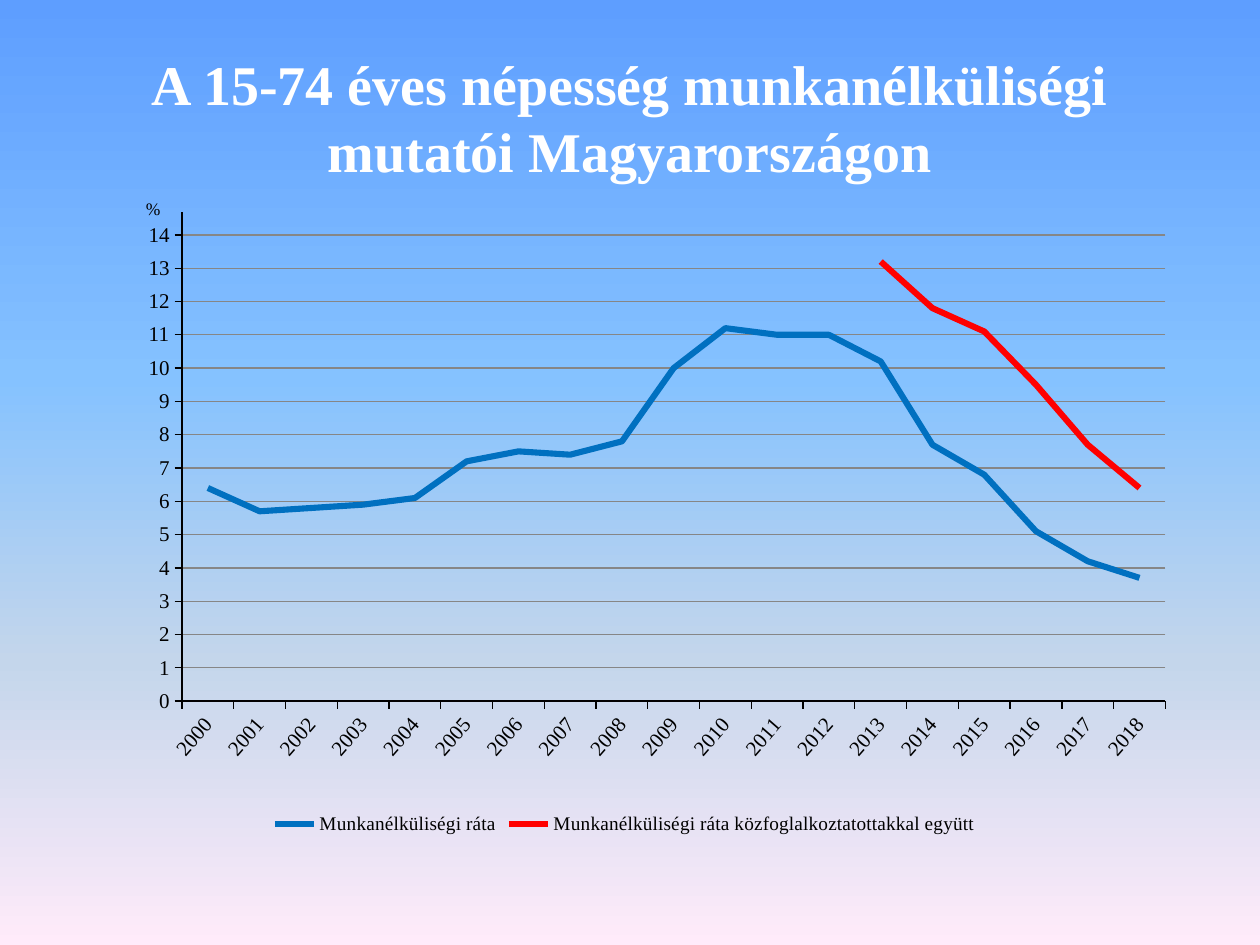
import dataclasses

import pptx
import pptx.chart.data
import pptx.dml.color
import pptx.enum.chart
import pptx.enum.text
import pptx.oxml
import pptx.oxml.ns
import pptx.util

Inches = pptx.util.Inches
Pt = pptx.util.Pt


@dataclasses.dataclass(frozen=True)
class Theme:
    """Colours, fonts and type sizes of the slide."""
    font: str = "Times New Roman"
    chart_font: str = "Calibri"
    white: str = "FFFFFF"
    ink: str = "000000"
    grid: str = "868686"
    rates: tuple = ("0070C0", "FF0000")
    sky: tuple = ((0, "5E9EFF"), (40, "85C2FF"), (70, "C4D6EB"), (100, "FFEBFA"))
    title_size: int = 32
    chart_size: int = 18
    axis_size: int = 12
    legend_size: int = 11
    unit_size: int = 10
    rate_width: float = 3.5
    axis_width: float = 0.75


class SlideBuilder:
    """Holds the theme and the current slide, and adds elements to it."""

    def __init__(self, slide, theme):
        self.slide = slide
        self.theme = theme

    def style_font(self, font, size, color, name=None, bold=False):
        font.name = name or self.theme.font
        font.size = Pt(size)
        font.bold = bold
        font.color.rgb = pptx.dml.color.RGBColor.from_string(color)

    def style_line(self, line, color, width):
        line.color.rgb = pptx.dml.color.RGBColor.from_string(color)
        line.width = Pt(width)

    def set_layout(self, parent, **settings):
        layout = parent.find(pptx.oxml.ns.qn("c:layout"))
        if layout is not None:
            position = parent.index(layout)
            parent.remove(layout)
        else:
            position = 0
        entries = "".join(f'<c:{key} val="{value}"/>' for key, value in settings.items())
        parent.insert(position, pptx.oxml.parse_xml(
            f'<c:layout {pptx.oxml.ns.nsdecls("c")}>'
            f"<c:manualLayout>{entries}</c:manualLayout></c:layout>"))

    def background(self):
        fill = self.slide.background.fill
        fill.gradient()
        fill.gradient_angle = 270
        stops = self.slide.element.xpath("p:cSld/p:bg//a:gsLst")[0]
        for stop in list(stops):
            stops.remove(stop)
        for percent, color in self.theme.sky:
            stops.append(pptx.oxml.parse_xml(
                f'<a:gs {pptx.oxml.ns.nsdecls("a")} pos="{percent * 1000}">'
                f'<a:srgbClr val="{color}"/></a:gs>'))

    def title(self, text, left, top, width, height):
        heading = self.slide.shapes.title
        heading.left, heading.top = Inches(left), Inches(top)
        heading.width, heading.height = Inches(width), Inches(height)
        frame = heading.text_frame
        frame.word_wrap = True
        frame.vertical_anchor = pptx.enum.text.MSO_ANCHOR.MIDDLE
        paragraph = frame.paragraphs[0]
        paragraph.alignment = pptx.enum.text.PP_ALIGN.CENTER
        run = paragraph.add_run()
        run.text = text
        self.style_font(run.font, self.theme.title_size, self.theme.white, bold=True)

    def axis(self, axis, number_format):
        axis.major_tick_mark = pptx.enum.chart.XL_TICK_MARK.OUTSIDE
        axis.minor_tick_mark = pptx.enum.chart.XL_TICK_MARK.NONE
        axis.tick_labels.number_format = number_format
        axis.tick_labels.number_format_is_linked = False
        self.style_font(axis.tick_labels.font, self.theme.axis_size, self.theme.ink)
        self.style_line(axis.format.line, self.theme.ink, self.theme.axis_width)

    def line_chart(self, years, rates, unit, left, top, width, height):
        theme = self.theme
        data = pptx.chart.data.CategoryChartData(number_format="0.0")
        data.categories = years
        for name, values in rates.items():
            data.add_series(name, values)
        chart = self.slide.shapes.add_chart(
            pptx.enum.chart.XL_CHART_TYPE.LINE, Inches(left), Inches(top),
            Inches(width), Inches(height), data).chart
        chart.has_title = False
        self.style_font(chart.font, theme.chart_size, theme.ink, theme.chart_font)

        plot = chart.plots[0]
        plot.vary_by_categories = False
        for series, color in zip(plot.series, theme.rates):
            series.smooth = False
            series.marker.style = pptx.enum.chart.XL_MARKER_STYLE.NONE
            self.style_line(series.format.line, color, theme.rate_width)

        self.axis(chart.category_axis, "General")
        value_axis = chart.value_axis
        self.axis(value_axis, "#,##0")
        value_axis.minimum_scale, value_axis.maximum_scale = 0, 14.7
        value_axis.major_unit = 1
        value_axis.has_major_gridlines = True
        self.style_line(value_axis.major_gridlines.format.line, theme.grid, theme.axis_width)
        unit_run = value_axis.axis_title.text_frame.paragraphs[0].add_run()
        unit_run.text = unit
        self.style_font(unit_run.font, theme.unit_size, theme.ink)

        chart.has_legend = True
        chart.legend.position = pptx.enum.chart.XL_LEGEND_POSITION.BOTTOM
        chart.legend.include_in_layout = False
        self.style_font(chart.legend.font, theme.legend_size, theme.ink)

        rotations = {"//c:catAx/c:txPr/a:bodyPr": -49, "//c:valAx/c:title//a:bodyPr": 0}
        for query, degrees in rotations.items():
            body = chart.element.xpath(query)[0]
            body.set("rot", str(degrees * 60000))
            body.set("vert", "horz")
        self.set_layout(chart.element.xpath("//c:valAx/c:title")[0],
                        xMode="edge", yMode="edge", x=0.07, y=0.005)
        self.set_layout(chart.element.xpath("//c:plotArea")[0],
                        layoutTarget="inner", xMode="edge", yMode="edge",
                        x=0.105, y=0.031, w=0.877, h=0.756)


def main():
    years = [str(year) for year in range(2000, 2019)]
    with_public_workers = [13.2, 11.8, 11.1, 9.5, 7.7, 6.4]
    rates = {
        "Munkanélküliségi ráta": [
            6.4, 5.7, 5.8, 5.9, 6.1, 7.2, 7.5, 7.4, 7.8, 10,
            11.2, 11, 11, 10.2, 7.7, 6.8, 5.1, 4.2, 3.7],
        "Munkanélküliségi ráta közfoglalkoztatottakkal együtt":
            [None] * (len(years) - len(with_public_workers)) + with_public_workers,
    }
    presentation = pptx.Presentation()
    presentation.slide_width, presentation.slide_height = Inches(10), Inches(7.5)
    slide = presentation.slides.add_slide(presentation.slide_layouts[5])
    builder = SlideBuilder(slide, Theme())
    builder.background()
    builder.title("A 15-74 éves népesség munkanélküliségi mutatói Magyarországon",
                  0.5, 0.3, 9, 1.25)
    builder.line_chart(years, rates, "%", 0.51, 1.52, 8.9, 5.14)
    presentation.save("out.pptx")


if __name__ == "__main__":
    main()
